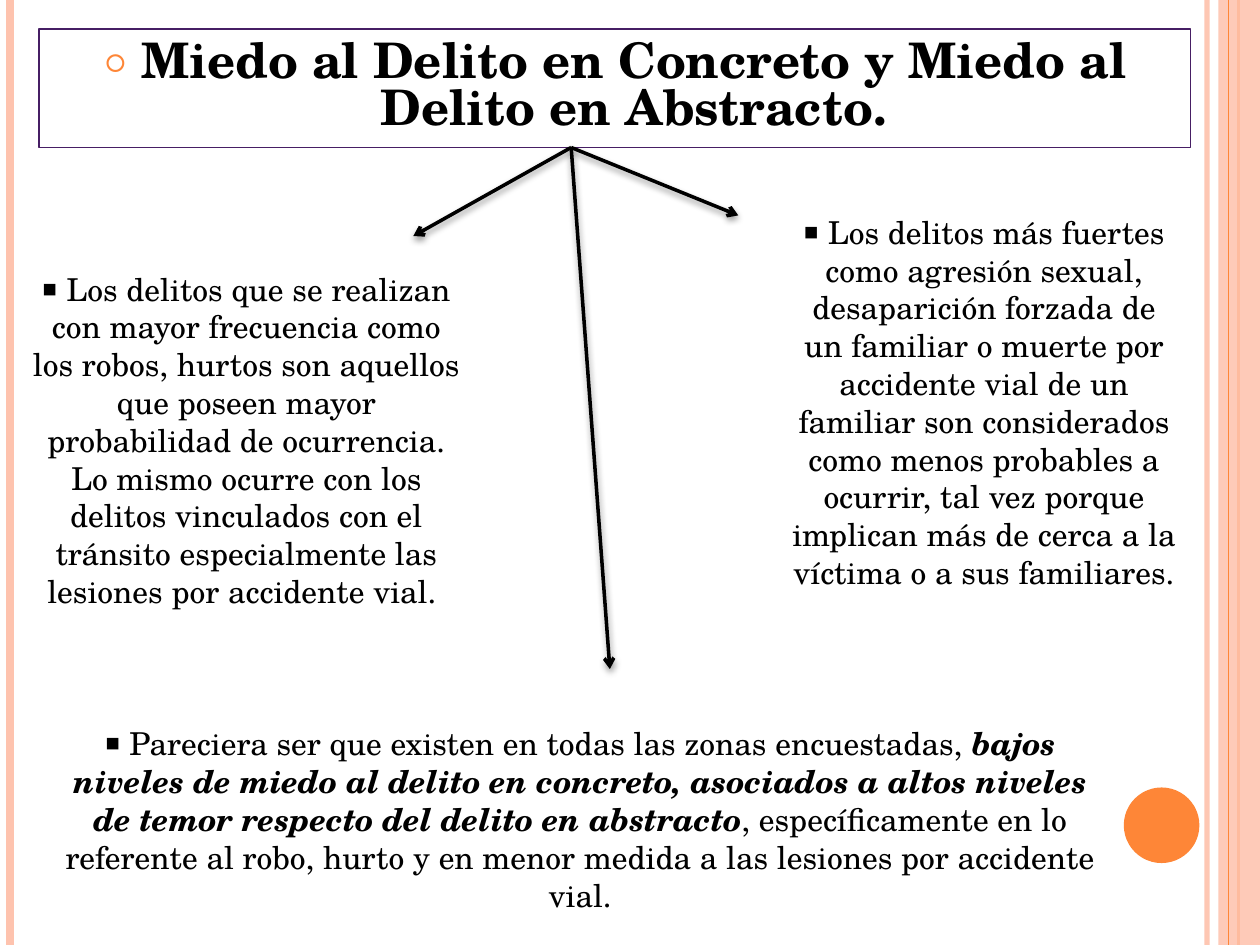
from dataclasses import dataclass
from typing import NamedTuple

from lxml import etree
from pptx import Presentation
from pptx.dml.color import RGBColor
from pptx.enum import shapes, text
from pptx.oxml import ns
from pptx.util import Pt


@dataclass(frozen=True)
class Theme:
    font: str = "TeX Gyre Schola"
    ink: str = "000000"
    accent: str = "FE8637"
    pale: str = "FEC3AE"
    frame: str = "461E64"
    title_size: float = 28
    body_size: float = 18


THEME = Theme()
SLIDE_W, SLIDE_H = 720, 540


class Box(NamedTuple):
    x: float
    y: float
    w: float
    h: float

    def emu(self) -> list:
        return [Pt(v) for v in self]


class Stripe(NamedTuple):
    x: float
    color: str
    width: float
    alpha: int = 100


class Words(NamedTuple):
    content: str
    strong: bool = False


class Note(NamedTuple):
    box: Box
    words: list[Words]


class Point(NamedTuple):
    x: float
    y: float


STRIPES = [
    Stripe(689.8, THEME.pale, 3, 93),
    Stripe(5.8, THEME.pale, 4.5),
    Stripe(707.8, THEME.accent, 1.5),
    Stripe(702, THEME.accent, 0.75),
]
BAND = Box(696.2, 0, SLIDE_W - 696.2, SLIDE_H)
DISC = Box(642.2, 450, 43.2, 43.2)
TITLE_BOX = Box(22.3, 16.6, 658.1, 67.7)
TITLE = "Miedo al Delito en Concreto y Miedo al Delito en Abstracto."
ARROW_START = Point(326.4, TITLE_BOX.y + TITLE_BOX.h)
ARROW_ENDS = [Point(236.2, 134.9), Point(421.9, 123.1), Point(348.5, 382.3)]
NOTES = [
    Note(Box(22.3, 410.4, 618.5, 116.6), [
        Words(" Pareciera ser que existen en todas las zonas encuestadas, "),
        Words("bajos niveles de miedo al delito en concreto, asociados a altos "
              "niveles de temor respecto del delito en abstracto", True),
        Words(", específicamente en lo referente al robo, hurto y en menor "
              "medida a las lesiones por accidente vial."),
    ]),
    Note(Box(11.5, 150.5, 258.5, 203.8), [
        Words(" Los delitos que se realizan con mayor frecuencia como los robos, "
              "hurtos son aquellos que poseen mayor probabilidad de ocurrencia. "
              "Lo mismo ocurre con los delitos vinculados con el tránsito "
              "especialmente las lesiones por accidente vial. "),
    ]),
    Note(Box(444.2, 118.1, 236.2, 225.4), [
        Words(" Los delitos más fuertes como agresión sexual, desaparición "
              "forzada de un familiar o muerte por accidente vial de un familiar "
              "son considerados como menos probables a ocurrir, tal vez porque "
              "implican más de cerca a la víctima o a sus familiares."),
    ]),
]


def rgb(color: str) -> RGBColor:
    return RGBColor.from_string(color)


def child(parent, tag: str, **attrs):
    return etree.SubElement(parent, ns.qn(tag), {k: str(v) for k, v in attrs.items()})


def set_alpha(element, percent: int) -> None:
    if percent < 100:
        for clr in element.iter(ns.qn("a:srgbClr")):
            child(clr, "a:alpha", val=percent * 1000)


def add_line(s, start: Point, end: Point, color: str, width: float):
    c = s.shapes.add_connector(
        shapes.MSO_CONNECTOR.STRAIGHT, *[Pt(v) for v in (*start, *end)])
    c.line.color.rgb = rgb(color)
    c.line.width = Pt(width)
    spPr = c._element.spPr
    return spPr.find(ns.qn("a:ln")), child(spPr, "a:effectLst")


def add_stripe(s, stripe: Stripe) -> None:
    ln, _ = add_line(s, Point(stripe.x, 0), Point(stripe.x, SLIDE_H),
                     stripe.color, stripe.width)
    set_alpha(ln, stripe.alpha)


def add_arrow(s, end: Point) -> None:
    ln, effects = add_line(s, ARROW_START, end, THEME.ink, 2)
    child(ln, "a:tailEnd", type="arrow")
    shadow = child(effects, "a:outerShdw", blurRad=Pt(4), dist=Pt(2),
                   dir=90 * 60000, rotWithShape=0)
    child(shadow, "a:srgbClr", val=THEME.ink)
    set_alpha(shadow, 40)


def add_solid(s, kind, box: Box, color: str, alpha: int = 100) -> None:
    sp = s.shapes.add_shape(kind, *box.emu())
    sp.shadow.inherit = False
    sp.fill.solid()
    sp.fill.fore_color.rgb = rgb(color)
    sp.line.fill.background()
    set_alpha(sp._element.spPr, alpha)


def set_bullet(p, char: str, color: str, size: int, indent: float) -> None:
    pPr = p._p.get_or_add_pPr()
    pPr.set("marL", str(Pt(indent)))
    pPr.set("indent", str(-Pt(indent)))
    child(child(pPr, "a:buClr"), "a:srgbClr", val=color)
    child(pPr, "a:buSzPct", val=size * 1000)
    child(pPr, "a:buFont", typeface=THEME.font)
    child(pPr, "a:buChar", char=char)


def add_run(p, words: Words, size: float) -> None:
    r = p.add_run()
    r.text = words.content
    r.font.name = THEME.font
    r.font.size = Pt(size)
    r.font.color.rgb = rgb(THEME.ink)
    r.font.bold = words.strong


def fill_title(sp) -> None:
    sp.left, sp.top, sp.width, sp.height = TITLE_BOX.emu()
    sp.line.color.rgb = rgb(THEME.frame)
    sp.line.width = Pt(0.75)
    tf = sp.text_frame
    tf.word_wrap = True
    tf.auto_size = text.MSO_AUTO_SIZE.NONE
    tf.vertical_anchor = text.MSO_ANCHOR.MIDDLE
    p = tf.paragraphs[0]
    p.alignment = text.PP_ALIGN.CENTER
    p.line_spacing = 0.8
    p.space_before = Pt(6)
    set_bullet(p, "○", THEME.accent, 70, 21.6)
    add_run(p, Words(TITLE, True), THEME.title_size)


def add_note(s, note: Note) -> None:
    tf = s.shapes.add_textbox(*note.box.emu()).text_frame
    tf.word_wrap = True
    tf.auto_size = text.MSO_AUTO_SIZE.SHAPE_TO_FIT_TEXT
    p = tf.paragraphs[0]
    p.alignment = text.PP_ALIGN.CENTER
    set_bullet(p, "▪", THEME.ink, 100, 0)
    for words in note.words:
        add_run(p, words, THEME.body_size)
        p.runs[-1].font.italic = words.strong


def main() -> None:
    prs = Presentation()
    prs.slide_width, prs.slide_height = Pt(SLIDE_W), Pt(SLIDE_H)
    s = prs.slides.add_slide(prs.slide_layouts[5])
    for stripe in STRIPES[:3]:
        add_stripe(s, stripe)
    add_solid(s, shapes.MSO_SHAPE.RECTANGLE, BAND, THEME.pale, 87)
    add_stripe(s, STRIPES[3])
    add_solid(s, shapes.MSO_SHAPE.OVAL, DISC, THEME.accent)
    fill_title(s.shapes.title)
    for note in NOTES:
        add_note(s, note)
    for end in ARROW_ENDS:
        add_arrow(s, end)
    prs.save("out.pptx")


if __name__ == "__main__":
    main()
